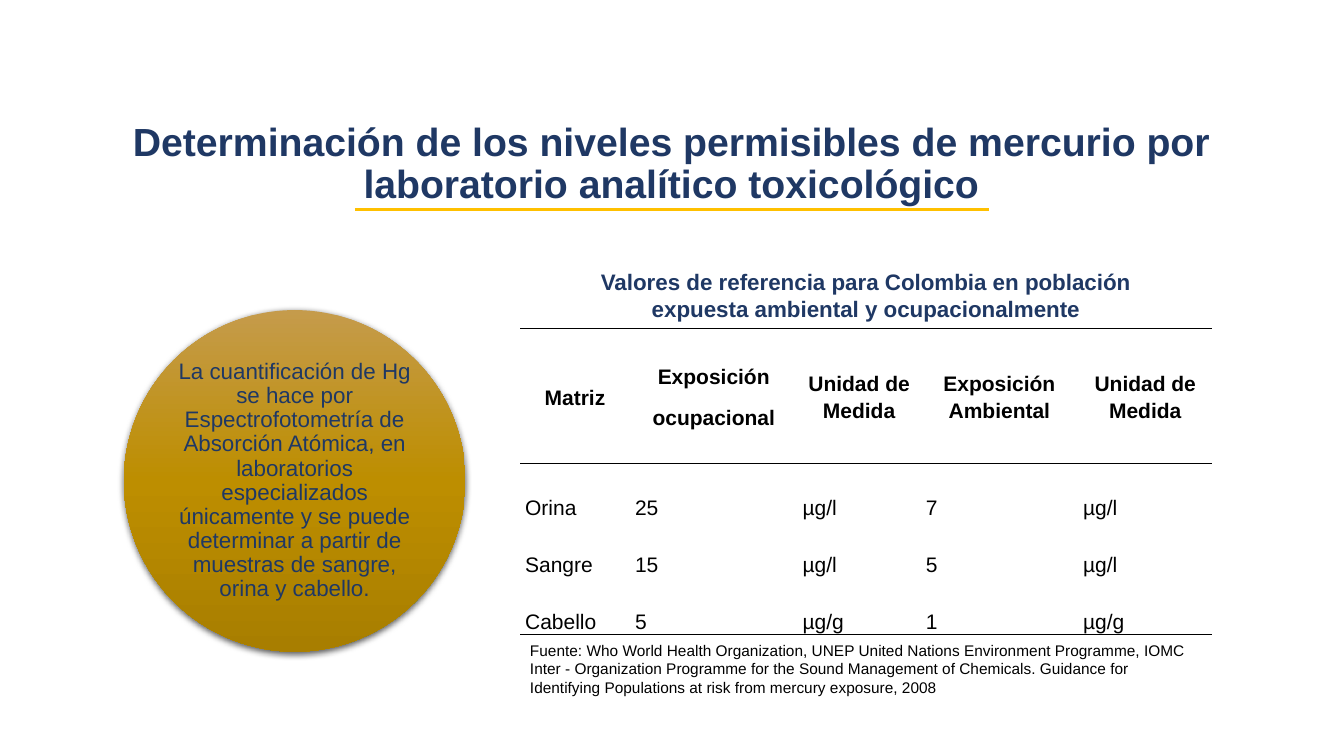
from lxml import etree
from pptx import Presentation
from pptx.dml.color import RGBColor
from pptx.enum import shapes, text
from pptx.oxml import parse_xml
from pptx.oxml.ns import nsdecls, qn
from pptx.util import Pt

NAVY = RGBColor(0x1F, 0x38, 0x64)
GOLD = RGBColor(0xFF, 0xC0, 0x00)
BLACK = RGBColor(0, 0, 0)
CENTER, LEFT = text.PP_ALIGN.CENTER, text.PP_ALIGN.LEFT
MIDDLE, BOTTOM = text.MSO_ANCHOR.MIDDLE, text.MSO_ANCHOR.BOTTOM


def write(paragraph, words, size, color, bold=False, align=LEFT, spacing=1.0):
    paragraph.alignment = align
    paragraph.line_spacing = spacing
    run = paragraph.add_run()
    run.text = words
    run.font.name = "Arial"
    run.font.size = Pt(size)
    run.font.bold = bold
    run.font.color.rgb = color


def set_border(cell, side, visible):
    """Draw a 1 pt black border on one side of a cell, or clear that side."""
    fill = f'<a:solidFill><a:srgbClr val="{BLACK}"/></a:solidFill>' if visible else "<a:noFill/>"
    cell._tc.get_or_add_tcPr().append(parse_xml(
        f'<a:ln{side} {nsdecls("a")} w="{Pt(1)}">{fill}</a:ln{side}>'))


prs = Presentation()
prs.slide_width, prs.slide_height = Pt(960), Pt(540)
slide = prs.slides.add_slide(prs.slide_layouts[6])

# Headings and source note
captions = [
    ((65.5, 63.4, 828, 108.7), MIDDLE, 28, NAVY, True, CENTER, 0.9,
     "Determinación de los niveles permisibles de mercurio por laboratorio analítico toxicológico"),
    ((388.8, 187.9, 459.4, 46), text.MSO_ANCHOR.TOP, 16, NAVY, True, CENTER, 1.0,
     "Valores de referencia para Colombia en población expuesta ambiental y ocupacionalmente"),
    ((371.5, 454.3, 494.6, 47.5), text.MSO_ANCHOR.TOP, 11, BLACK, False, LEFT, 1.0,
     "Fuente: Who World Health Organization, UNEP United Nations Environment Programme, "
     "IOMC Inter - Organization Programme for the Sound Management of Chemicals. Guidance "
     "for Identifying Populations at risk from mercury exposure, 2008"),
]
for box, anchor, size, color, bold, align, spacing, words in captions:
    frame = slide.shapes.add_textbox(*map(Pt, box)).text_frame
    frame.word_wrap = True
    frame.vertical_anchor = anchor
    write(frame.paragraphs[0], words, size, color, bold, align, spacing)

underline = slide.shapes.add_connector(
    shapes.MSO_CONNECTOR.STRAIGHT, Pt(253.5), Pt(149.8), Pt(706.4), Pt(149.8))
underline.line.color.rgb = GOLD
underline.line.width = Pt(2.25)
etree.SubElement(underline._element.spPr, qn("a:effectLst"))

# Circle with the method
method = slide.shapes.add_shape(
    shapes.MSO_SHAPE.OVAL, Pt(88.5), Pt(221.5), Pt(244), Pt(244))
method.line.fill.background()
method.fill.gradient()
method.fill.gradient_angle = 270
stops = method._element.spPr.find(qn("a:gradFill")).find(qn("a:gsLst"))
for stop in list(stops):
    stops.remove(stop)
for percent, color in [(0, "C59B4B"), (50, "BD8E00"), (100, "A87E00")]:
    stops.append(parse_xml(
        f'<a:gs {nsdecls("a")} pos="{percent * 1000}"><a:srgbClr val="{color}"/></a:gs>'))
method.shadow.inherit = False
method._element.spPr.find(qn("a:effectLst")).append(parse_xml(
    f'<a:outerShdw {nsdecls("a")} blurRad="{Pt(4.5)}" dist="{Pt(1.5)}" dir="5400000" '
    f'algn="ctr" rotWithShape="0"><a:srgbClr val="{BLACK}"><a:alpha val="63000"/>'
    '</a:srgbClr></a:outerShdw>'))
frame = method.text_frame
frame.word_wrap = True
frame.vertical_anchor = MIDDLE
frame.margin_left = frame.margin_right = frame.margin_top = frame.margin_bottom = Pt(1.5)
write(frame.paragraphs[0],
      "La cuantificación de Hg se hace por Espectrofotometría de Absorción Atómica, en "
      "laboratorios especializados únicamente y se puede determinar a partir de muestras "
      "de sangre, orina y cabello.", 16, NAVY, align=CENTER, spacing=0.9)

# Reference values
rows = [
    ["Matriz", "Exposición\nocupacional", "Unidad de Medida", "Exposición Ambiental",
     "Unidad de Medida"],
    ["Orina", "25", "µg/l", "7", "µg/l"],
    ["Sangre", "15", "µg/l", "5", "µg/l"],
    ["Cabello", "5", "µg/g", "1", "µg/g"],
]
widths = [78.5, 119.7, 88, 112.4, 96]
heights = [96.3, 40.7, 40.7, 40.7]
limits = slide.shapes.add_table(len(rows), len(widths), Pt(371.5), Pt(234.7),
                                Pt(sum(widths)), Pt(sum(heights))).table
limits.first_row = limits.horz_banding = False
for column, width in zip(limits.columns, widths):
    column.width = Pt(width)
for r, (row, height) in enumerate(zip(rows, heights)):
    limits.rows[r].height = Pt(height)
    header, last = r == 0, r == len(rows) - 1
    for c, words in enumerate(row):
        cell = limits.cell(r, c)
        cell.margin_left = cell.margin_right = Pt(3.6)
        cell.margin_top = cell.margin_bottom = 0
        cell.vertical_anchor = MIDDLE if header else BOTTOM
        for side, visible in [("L", False), ("R", False), ("T", r < 2), ("B", header or last)]:
            set_border(cell, side, visible)
        cell.fill.background()
        for i, line in enumerate(words.split("\n")):
            paragraph = cell.text_frame.add_paragraph() if i else cell.text_frame.paragraphs[0]
            if i:
                paragraph.space_before = Pt(10)
            write(paragraph, line, 15, BLACK, header, CENTER if header else LEFT, 1.15)

prs.save("out.pptx")
